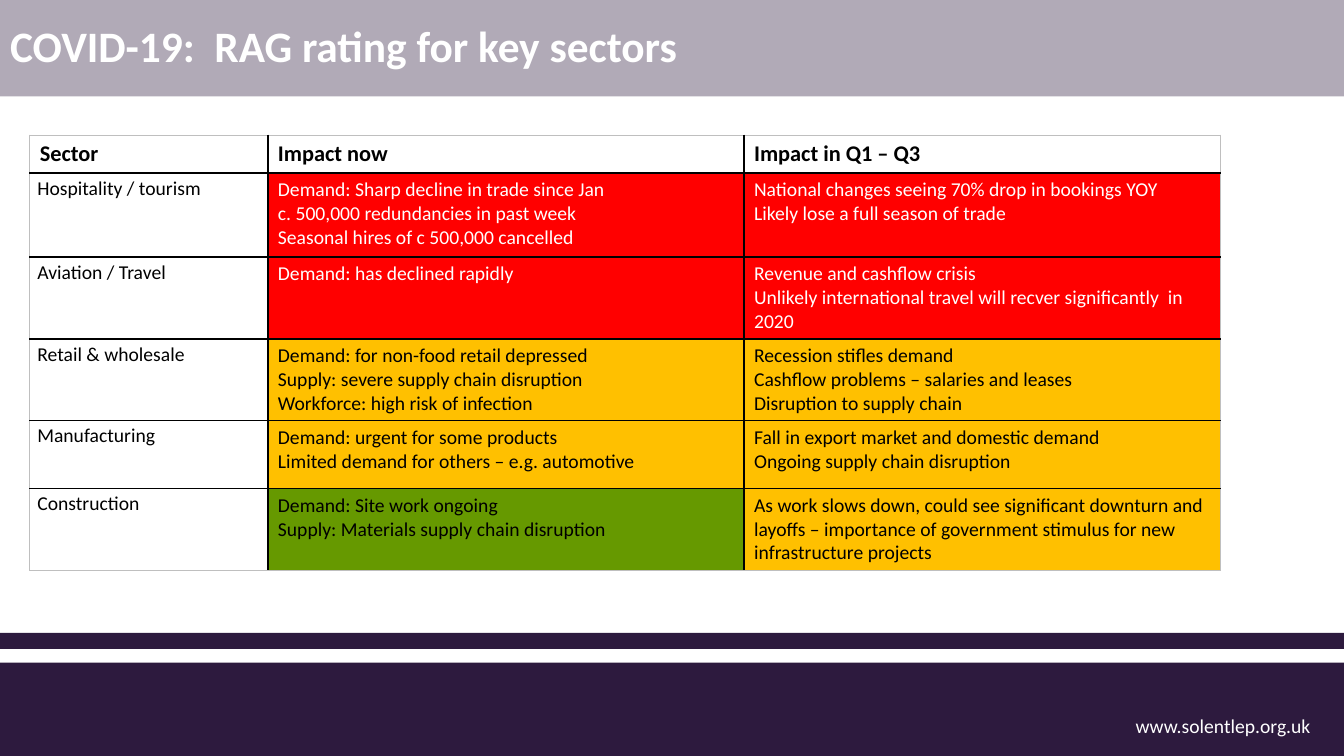
from lxml.etree import SubElement
from pptx import Presentation
from pptx.dml.color import RGBColor
from pptx.enum.shapes import MSO_SHAPE
from pptx.enum.text import MSO_ANCHOR, MSO_AUTO_SIZE, PP_ALIGN
from pptx.oxml.ns import qn
from pptx.util import Cm, Pt

PURPLE = RGBColor(0x2D, 0x1A, 0x3E)
WHITE = RGBColor(0xFF, 0xFF, 0xFF)
BLACK = RGBColor(0x00, 0x00, 0x00)
GREY = RGBColor(0xBF, 0xBF, 0xBF)
RED = RGBColor(0xFF, 0x00, 0x00)
AMBER = RGBColor(0xFF, 0xC0, 0x00)
GREEN = RGBColor(0x66, 0x99, 0x00)


def write(frame, text, size=14, color=BLACK, bold=False, line_spacing=None, space_after=None):
    """Fill a text frame, one paragraph per line of text."""
    frame.word_wrap = True
    frame.text = text
    for paragraph in frame.paragraphs:
        paragraph.alignment = PP_ALIGN.LEFT
        paragraph.line_spacing = line_spacing
        paragraph.space_after = space_after
        font = paragraph.font
        font.name, font.size, font.bold = "Calibri", Pt(size), bold
        font.color.rgb = color


def add_border(cell, side, color, width):
    line = SubElement(cell._tc.get_or_add_tcPr(), qn(f"a:ln{side}"), w=str(Pt(width)))
    SubElement(SubElement(line, qn("a:solidFill")), qn("a:srgbClr"), val=str(color))


prs = Presentation()
prs.slide_width, prs.slide_height = Cm(33.87), Cm(19.05)
slide = prs.slides.add_slide(prs.slide_layouts[5])

# Footer bands and web address
for top, height in ((16.7, 2.35), (15.95, 0.4)):
    band = slide.shapes.add_shape(MSO_SHAPE.RECTANGLE, 0, Cm(top), prs.slide_width, Cm(height))
    band.shadow.inherit = False
    band.fill.solid()
    band.fill.fore_color.rgb = PURPLE
    band.line.fill.background()

website = slide.shapes.add_textbox(Cm(28.37), Cm(17.86), Cm(5), Cm(1.02))
write(website.text_frame, "www.solentlep.org.uk", color=WHITE)

# Title on a translucent band
title = slide.shapes.title
title.left, title.top, title.width, title.height = 0, 0, prs.slide_width, Cm(2.43)
title.fill.solid()
title.fill.fore_color.rgb = PURPLE
tint = title.fill._xPr.find(qn("a:solidFill"))[0]
SubElement(tint, qn("a:alpha"), val="37000")
title.text_frame.auto_size = MSO_AUTO_SIZE.NONE
title.text_frame.vertical_anchor = MSO_ANCHOR.MIDDLE
write(title.text_frame, "COVID-19:  RAG rating for key sectors",
      size=31, color=WHITE, bold=True, line_spacing=0.9)

# Sector ratings: row height in cm, then text and rating colour of each cell
ratings = [
    (0.95, ("Sector", WHITE), ("Impact now", WHITE), ("Impact in Q1 – Q3", WHITE)),
    (2.12, ("Hospitality / tourism", WHITE),
     ("Demand: Sharp decline in trade since Jan\n"
      "c. 500,000 redundancies in past week\n"
      "Seasonal hires of c 500,000 cancelled", RED),
     ("National changes seeing 70% drop in bookings YOY\n"
      "Likely lose a full season of trade", RED)),
    (2.06, ("Aviation / Travel", WHITE),
     ("Demand: has declined rapidly", RED),
     ("Revenue and cashflow crisis\n"
      "Unlikely international travel will recver significantly  in 2020", RED)),
    (2.06, ("Retail & wholesale", WHITE),
     ("Demand: for non-food retail depressed\n"
      "Supply: severe supply chain disruption\n"
      "Workforce: high risk of infection", AMBER),
     ("Recession stifles demand\n"
      "Cashflow problems – salaries and leases\n"
      "Disruption to supply chain", AMBER)),
    (1.71, ("Manufacturing", WHITE),
     ("Demand: urgent for some products\n"
      "Limited demand for others – e.g. automotive", AMBER),
     ("Fall in export market and domestic demand\n"
      "Ongoing supply chain disruption", AMBER)),
    (2.06, ("Construction", WHITE),
     ("Demand: Site work ongoing\n"
      "Supply: Materials supply chain disruption", GREEN),
     ("As work slows down, could see significant downturn and layoffs – importance of "
      "government stimulus for new infrastructure projects", AMBER)),
]
column_widths = (6, 12, 12)
last_row, last_column = len(ratings) - 1, len(column_widths) - 1

table = slide.shapes.add_table(
    len(ratings), len(column_widths), Cm(0.75), Cm(3.41),
    Cm(sum(column_widths)), Cm(sum(row[0] for row in ratings))).table
table.first_row = table.horz_banding = False
for column, width in zip(table.columns, column_widths):
    column.width = Cm(width)

for r, (height, *entries) in enumerate(ratings):
    table.rows[r].height = Cm(height)
    for c, (text, rating) in enumerate(entries):
        cell = table.cell(r, c)
        edges = {
            "L": (GREY, 1) if c == 0 else (BLACK, 1.5 if c == 1 else 1),
            "R": (GREY, 1) if c == last_column else (BLACK, 1.5 if c == 0 else 1),
            "T": (GREY, 1) if r == 0 else (BLACK, 1.5 if r <= 2 else 1),
            "B": (GREY, 1) if r == last_row else (BLACK, 1.5 if r <= 1 else 1),
        }
        for side, (color, width) in edges.items():
            add_border(cell, side, color, width)
        cell.fill.solid()
        cell.fill.fore_color.rgb = rating
        if r == 0:
            write(cell.text_frame, text, size=16, bold=True)
        elif c == 0:
            cell.margin_left = cell.margin_right = Cm(0.19)
            cell.margin_top = cell.margin_bottom = 0
            write(cell.text_frame, text, line_spacing=1.15, space_after=Pt(10))
        else:
            write(cell.text_frame, text, color=WHITE if rating == RED else BLACK)

prs.save("out.pptx")
